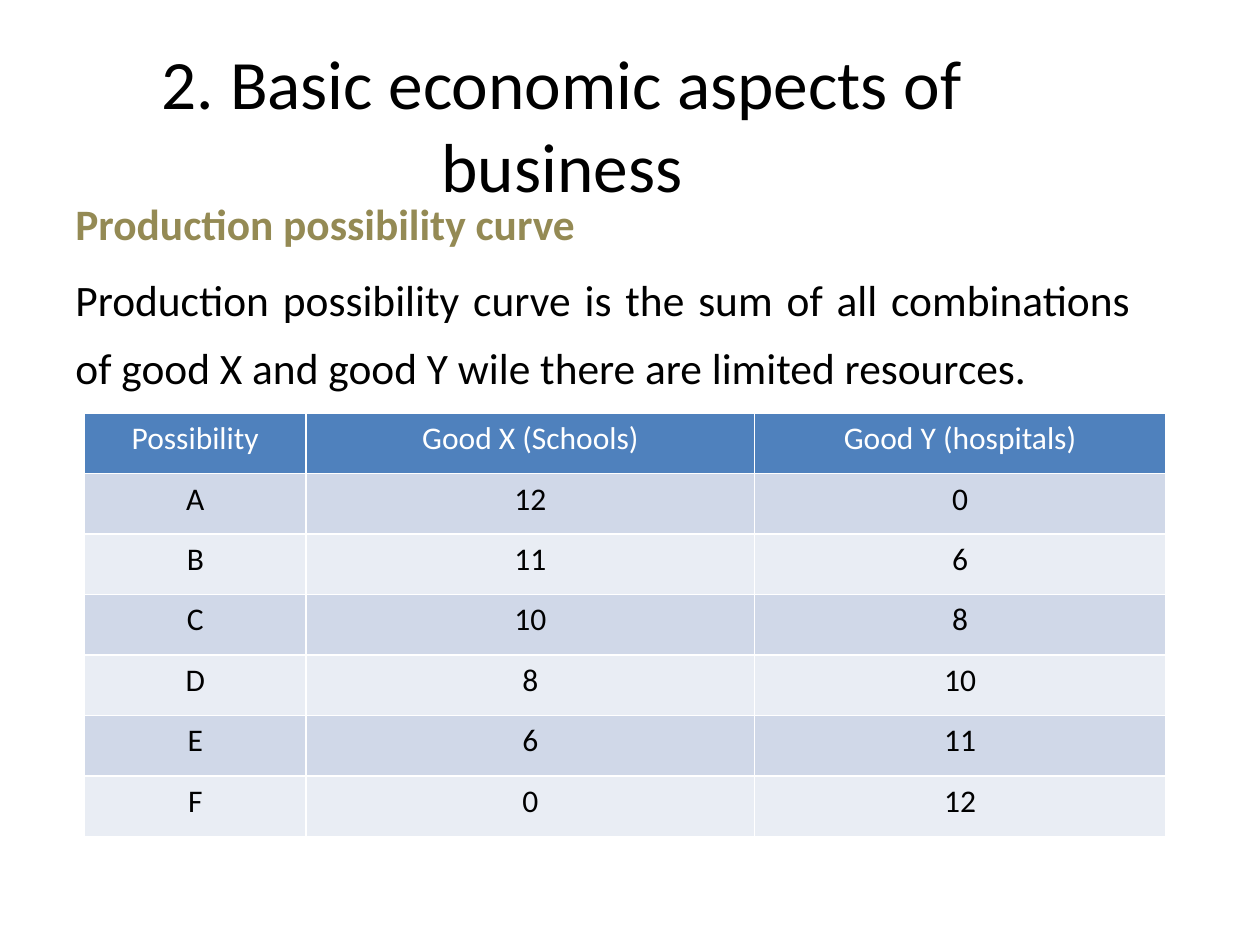
from pptx import Presentation
from pptx.dml.color import RGBColor
from pptx.enum.text import MSO_ANCHOR, PP_ALIGN
from pptx.util import Inches, Pt

FONT = "Calibri"
BLACK = RGBColor(0x00, 0x00, 0x00)
WHITE = RGBColor(0xFF, 0xFF, 0xFF)
OLIVE = RGBColor(0x94, 0x8A, 0x54)
HEADER_BLUE = RGBColor(0x4F, 0x81, 0xBD)
BANDS = (RGBColor(0xD0, 0xD8, 0xE8), RGBColor(0xE9, 0xED, 0xF4))

CENTER, JUSTIFY = PP_ALIGN.CENTER, PP_ALIGN.JUSTIFY
TOP, MIDDLE = MSO_ANCHOR.TOP, MSO_ANCHOR.MIDDLE

COLUMN_WIDTHS = (1.76, 3.56, 3.26)
ROW_HEIGHT = 0.48
POSSIBILITIES = (
    ("Possibility", "Good X (Schools)", "Good Y (hospitals)"),
    ("A", "12", "0"),
    ("B", "11", "6"),
    ("C", "10", "8"),
    ("D", "8", "10"),
    ("E", "6", "11"),
    ("F", "0", "12"),
)


def style_paragraph(p, text, size, color, align, bold=False):
    p.text = text
    p.alignment = align
    p.font.name = FONT
    p.font.size = Pt(size)
    p.font.bold = bold
    p.font.color.rgb = color


def add_text_frame(slide, left, top, width, height, anchor):
    box = slide.shapes.add_textbox(
        Inches(left), Inches(top), Inches(width), Inches(height))
    tf = box.text_frame
    tf.word_wrap = True
    tf.vertical_anchor = anchor
    return tf


def add_title(slide, text):
    tf = add_text_frame(slide, 0.5, 0.35, 7.92, 1.25, MIDDLE)
    style_paragraph(tf.paragraphs[0], text, 39.6, BLACK, CENTER)


def add_definition(slide, term, definition):
    tf = add_text_frame(slide, 0.5, 1.39, 8.58, 2.07, TOP)
    heading, body = tf.paragraphs[0], tf.add_paragraph()
    style_paragraph(heading, term, 24.8, OLIVE, JUSTIFY, bold=True)
    style_paragraph(body, definition, 24.8, BLACK, JUSTIFY)
    for p in tf.paragraphs:
        p.line_spacing = 1.3
        p.space_before = Pt(5)


def add_possibility_table(slide, rows):
    table = slide.shapes.add_table(
        len(rows), len(COLUMN_WIDTHS), Inches(0.67), Inches(3.28),
        Inches(sum(COLUMN_WIDTHS)), Inches(ROW_HEIGHT * len(rows))).table
    for column, width in zip(table.columns, COLUMN_WIDTHS):
        column.width = Inches(width)
    for i, values in enumerate(rows):
        fill = BANDS[(i - 1) % 2] if i else HEADER_BLUE
        color = BLACK if i else WHITE
        for j, value in enumerate(values):
            cell = table.cell(i, j)
            cell.fill.solid()
            cell.fill.fore_color.rgb = fill
            style_paragraph(cell.text_frame.paragraphs[0], value, 18, color, CENTER)


def main():
    prs = Presentation()
    prs.slide_width, prs.slide_height = Inches(10), Inches(7.5)
    slide = prs.slides.add_slide(prs.slide_layouts[6])

    # Title and definition
    add_title(slide, "2. Basic economic aspects of business")
    add_definition(
        slide, "Production possibility curve",
        "Production possibility curve is the sum of all combinations of "
        "good X and good Y wile there are limited resources.")

    # Combinations of the two goods
    add_possibility_table(slide, POSSIBILITIES)

    prs.save("out.pptx")


if __name__ == "__main__":
    main()
